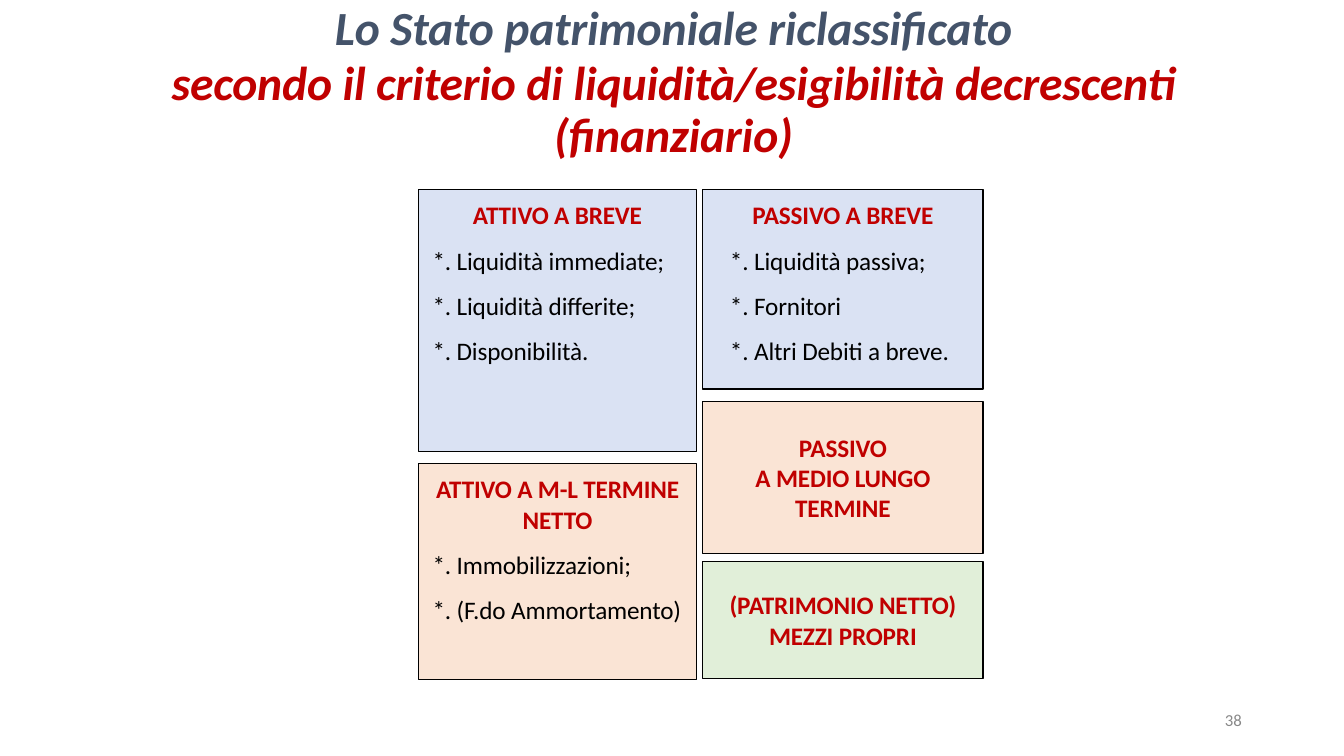
from pptx import Presentation
from pptx.dml.color import RGBColor
from pptx.enum.shapes import MSO_SHAPE
from pptx.enum.text import MSO_ANCHOR, PP_ALIGN
from pptx.util import Inches, Pt

RECT = MSO_SHAPE.RECTANGLE
TOP, MIDDLE = MSO_ANCHOR.TOP, MSO_ANCHOR.MIDDLE
LEFT, CENTER = PP_ALIGN.LEFT, PP_ALIGN.CENTER

BLACK = RGBColor(0x00, 0x00, 0x00)
RED = RGBColor(0xC0, 0x00, 0x00)
SLATE = RGBColor(0x44, 0x53, 0x6A)
GRAY = RGBColor(0x88, 0x88, 0x88)
BLUE_FILL = RGBColor(0xDA, 0xE2, 0xF3)
PEACH_FILL = RGBColor(0xFA, 0xE4, 0xD5)
GREEN_FILL = RGBColor(0xE1, 0xEF, 0xD9)

HEADING = {"size": Pt(18), "bold": True}
ITEM = {"size": Pt(18), "bold": False}
TITLE = {"size": Pt(34), "bold": True, "italic": True}
NUMBER = {"size": Pt(12)}

# top, height, fill, heading lines, items, item indent
ASSETS = [
    (1.88, 2.6, BLUE_FILL, ["ATTIVO A BREVE"],
     ["Liquidità immediate;", "Liquidità differite;", "Disponibilità."], 0.14),
    (4.6, 2.14, PEACH_FILL, ["ATTIVO A M-L TERMINE NETTO"],
     ["Immobilizzazioni;", "(F.do Ammortamento)"], 0.14),
]
LIABILITIES = [
    (1.88, 1.98, BLUE_FILL, ["PASSIVO A BREVE"],
     ["Liquidità passiva;", "Fornitori", "Altri Debiti a breve."], 0.27),
    (3.98, 1.51, PEACH_FILL, ["PASSIVO", "A MEDIO LUNGO", "TERMINE"], [], 0),
    (5.57, 1.16, GREEN_FILL, ["(PATRIMONIO NETTO)", "MEZZI PROPRI"], [], 0),
]


def prepare_frame(sp, top=0, anchor=TOP):
    """Set wrapping and insets, and return the text frame."""
    tf = sp.text_frame
    frame_format = {"word_wrap": True, "vertical_anchor": anchor,
                    "margin_left": 0, "margin_right": 0,
                    "margin_top": Inches(top), "margin_bottom": 0}
    for name, value in frame_format.items():
        setattr(tf, name, value)
    return tf


def add_line(tf, text, color, font, align=LEFT, **paragraph_format):
    """Write a paragraph, using the empty first one if it is still free."""
    first = tf.paragraphs[0]
    p = tf.add_paragraph() if first.runs else first
    p.alignment = align
    for name, value in paragraph_format.items():
        setattr(p, name, value)
    r = p.add_run()
    r.text = text
    r.font.name = "Calibri"
    r.font.color.rgb = color
    for name, value in font.items():
        setattr(r.font, name, value)
    r.font._element.set("spc", "-10")
    return p


def add_title(slide, left, top, width, height):
    box = slide.shapes.add_textbox(*map(Inches, (left, top, width, height)))
    tf = prepare_frame(box, top=0.01)
    add_line(tf, "Lo Stato patrimoniale riclassificato", SLATE, TITLE, CENTER,
             line_spacing=Pt(38.8))
    add_line(tf, "secondo il criterio di liquidità/esigibilità decrescenti (finanziario)",
             RED, TITLE, CENTER, line_spacing=Pt(36.7), space_before=Pt(2.5))


def add_block(slide, left, top, width, height, fill, headings, items, indent):
    sp = slide.shapes.add_shape(RECT, *map(Inches, (left, top, width, height)))
    sp.shadow.inherit = False
    sp.fill.solid()
    sp.fill.fore_color.rgb = fill
    sp.line.color.rgb = BLACK
    sp.line.width = Pt(0.96)
    tf = prepare_frame(sp, 0.1, TOP) if items else prepare_frame(sp, 0, MIDDLE)
    for heading in headings:
        add_line(tf, heading, RED, HEADING, CENTER)
    for item in items:
        p = add_line(tf, f"*. {item}", BLACK, ITEM, space_before=Pt(10.8))
        p._p.get_or_add_pPr().set("marL", str(Inches(indent)))


def add_column(slide, left, width, blocks):
    for top, height, *content in blocks:
        add_block(slide, left, top, width, height, *content)


def add_slide_number(slide, left, top, width, height):
    box = slide.shapes.add_textbox(*map(Inches, (left, top, width, height)))
    add_line(prepare_frame(box), "38", GRAY, NUMBER, line_spacing=Pt(12.4))


def main():
    prs = Presentation()
    prs.slide_width, prs.slide_height = Inches(13.33), Inches(7.5)
    slide = prs.slides.add_slide(prs.slide_layouts[6])
    add_title(slide, 1.64, 0, 10.08, 1.61)
    add_column(slide, 4.15, 2.76, ASSETS)
    add_column(slide, 6.97, 2.78, LIABILITIES)
    add_slide_number(slide, 12.15, 7.07, 0.23, 0.17)
    prs.save("out.pptx")


if __name__ == "__main__":
    main()
